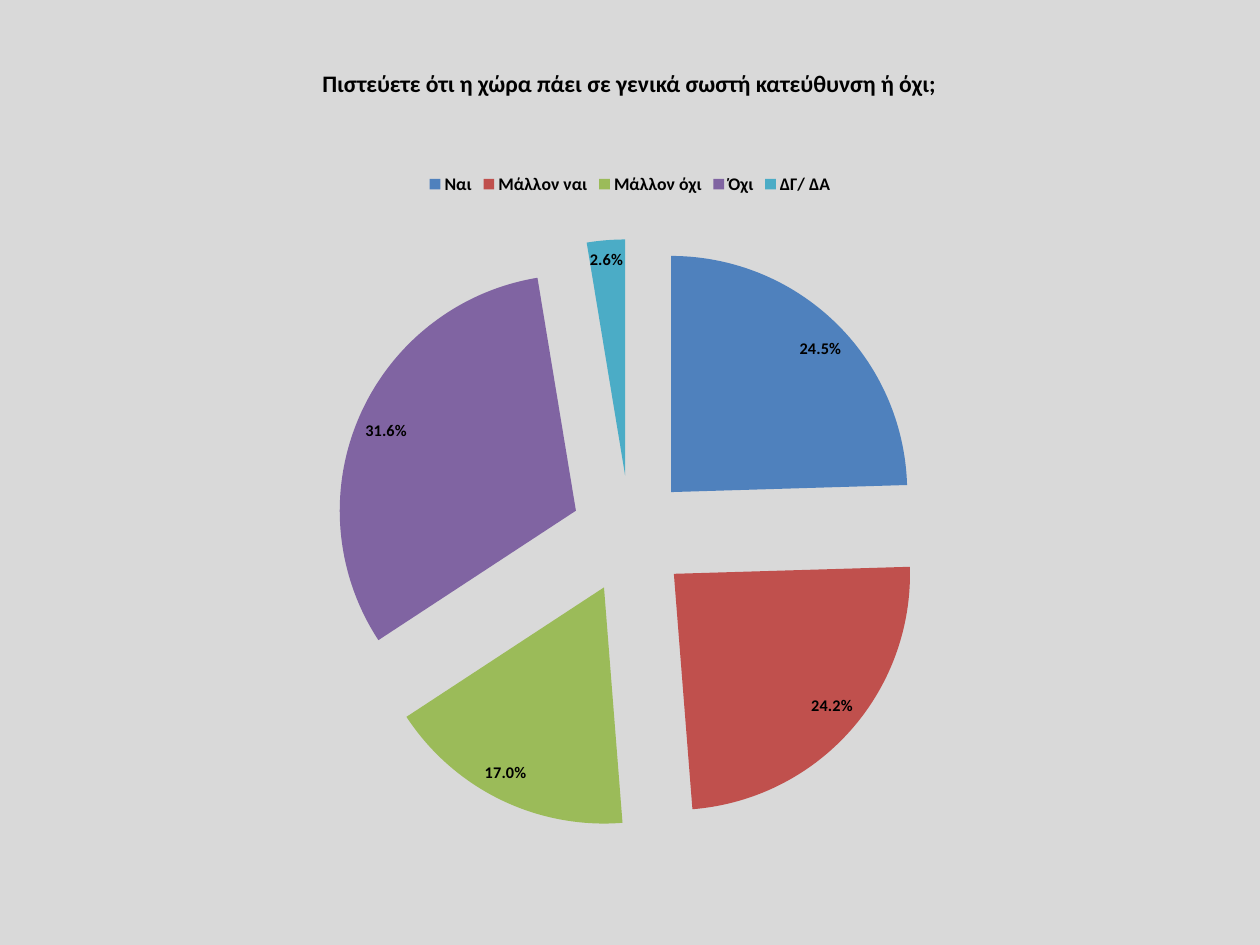
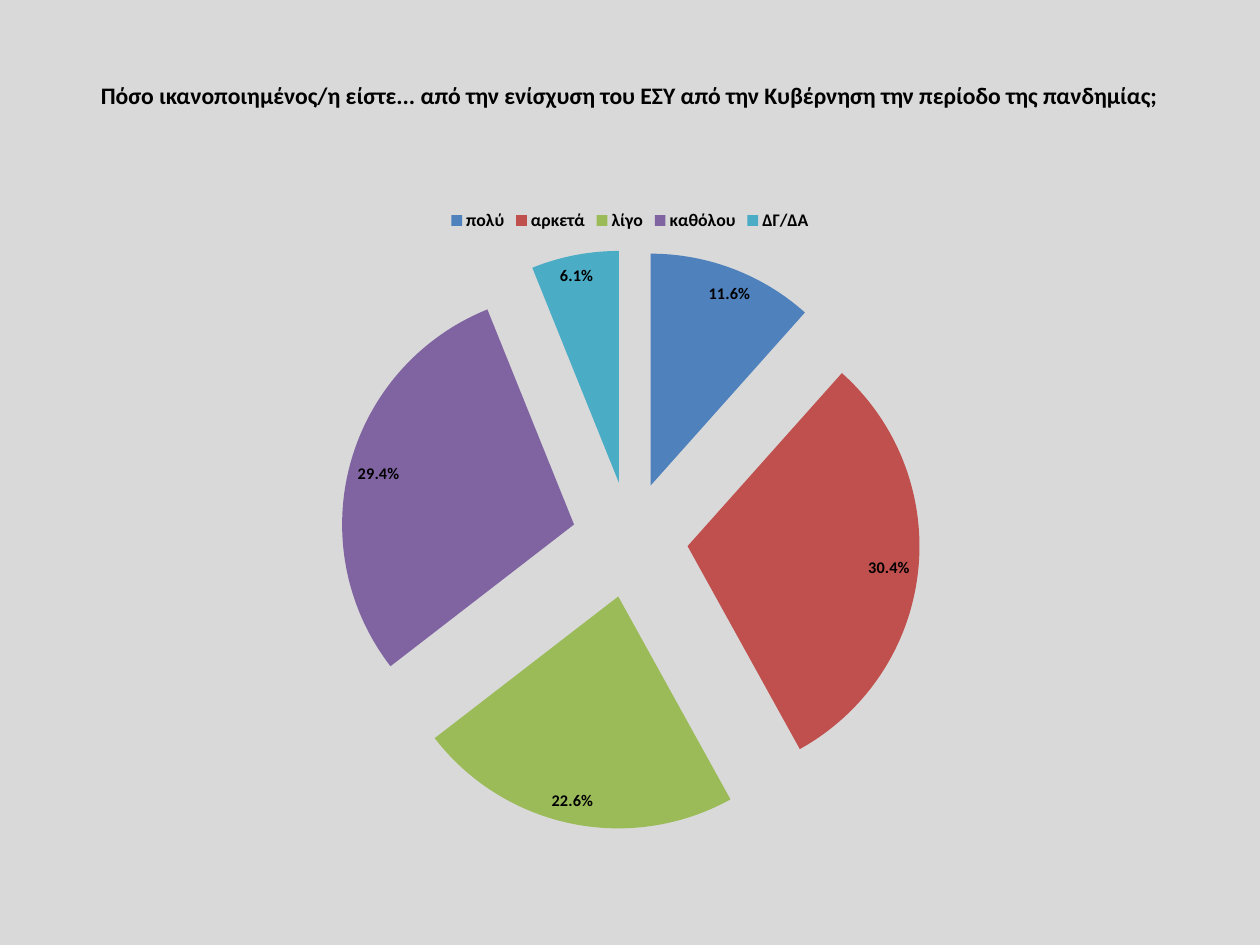
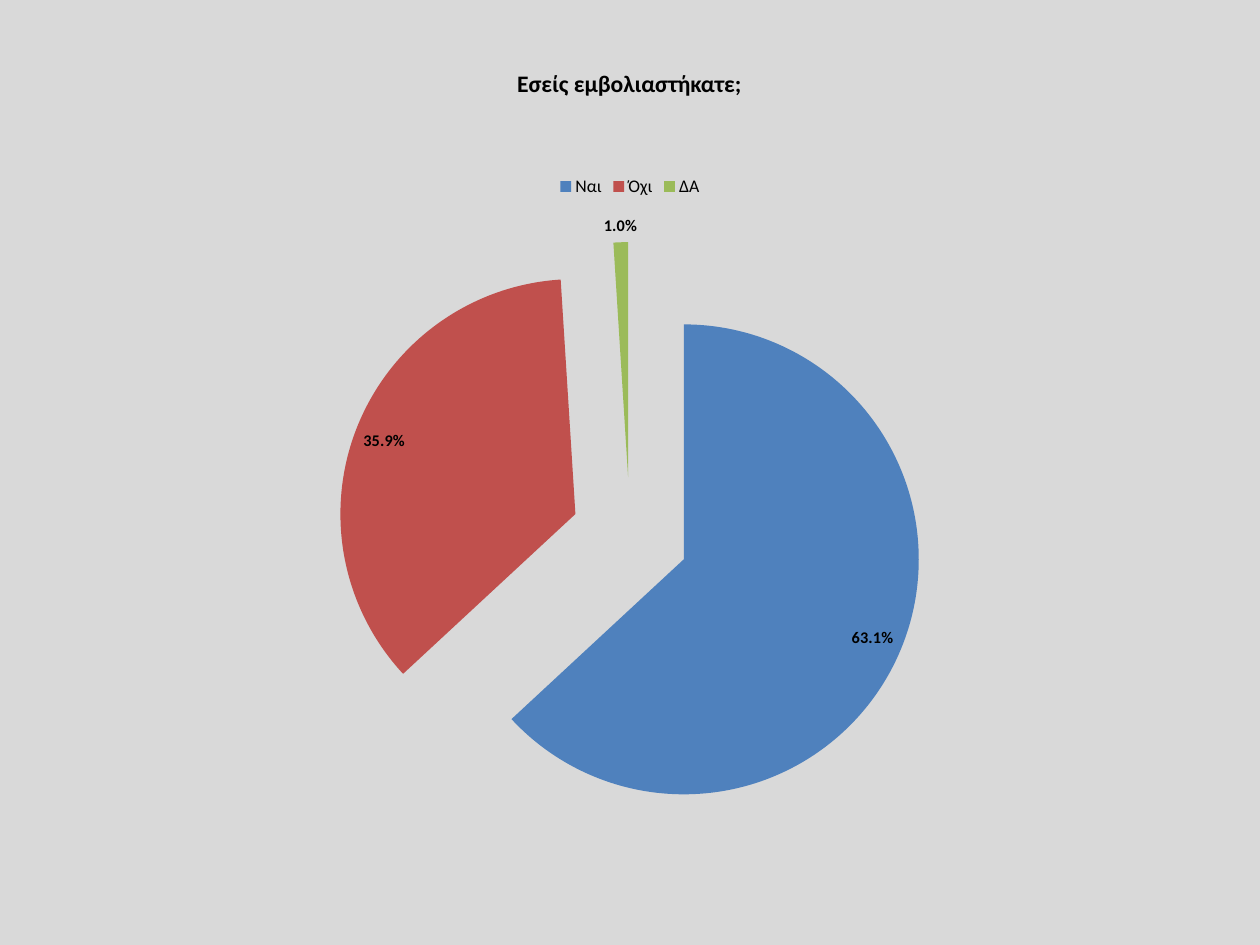
from pptx import Presentation
from pptx.chart.data import CategoryChartData
from pptx.dml.color import RGBColor
from pptx.enum.chart import XL_CHART_TYPE, XL_LABEL_POSITION, XL_LEGEND_POSITION
from pptx.enum.text import MSO_ANCHOR, PP_ALIGN
from pptx.oxml.ns import qn
from pptx.util import Pt

FONT = "Calibri"
COLORS = {
    "background": "D9D9D9",
    "text": "000000",
    "blue": "4F81BD",
    "red": "C0504D",
    "green": "9BBB59",
    "purple": "8064A2",
    "teal": "4BACC6",
}
SLICES = ["blue", "red", "green", "purple", "teal"]
EXPLOSION = 25

# Poll questions: answers in percent, and the positions that differ
POLLS = [
    {
        "title": "Πιστεύετε ότι η χώρα πάει σε γενικά σωστή κατεύθυνση ή όχι;",
        "answers": {"Ναι": 24.5, "Μάλλον ναι": 24.2, "Μάλλον όχι": 17,
                    "Όχι": 31.6, "ΔΓ/ ΔΑ": 2.6},
        "title_height": 44.6, "chart_top": 109.4, "legend_bold": True,
    },
    {
        "title": "Πόσο ικανοποιημένος/η είστε... από την ενίσχυση του ΕΣΥ "
                 "από την Κυβέρνηση την περίοδο της πανδημίας;",
        "answers": {"πολύ": 11.6, "αρκετά": 30.4, "λίγο": 22.6,
                    "καθόλου": 29.4, "ΔΓ/ΔΑ": 6.1},
        "title_height": 60.5, "chart_top": 134, "legend_bold": True,
    },
    {
        "title": "Εσείς εμβολιαστήκατε;",
        "answers": {"Ναι": 63.1, "Όχι": 35.9, "ΔΑ": 1},
        "title_height": 44.6, "chart_top": 111, "legend_bold": False,
    },
]
CHART_BOTTOM = 571.3


def rgb(name):
    return RGBColor.from_string(COLORS[name])


def set_font(font, size, bold):
    font.name = FONT
    font.size = Pt(size)
    font.bold = bold
    font.color.rgb = rgb("text")


prs = Presentation()
prs.slide_width = Pt(852.5)
prs.slide_height = Pt(639.4)

# Shared background
fill = prs.slide_master.background.fill
fill.solid()
fill.fore_color.rgb = rgb("background")

for poll in POLLS:
    s = prs.slides.add_slide(prs.slide_layouts[6])

    # Question
    title = s.shapes.add_textbox(Pt(58.3), Pt(33.8), Pt(735), Pt(poll["title_height"]))
    tf = title.text_frame
    tf.word_wrap = True
    tf.vertical_anchor = MSO_ANCHOR.MIDDLE
    tf.margin_left = tf.margin_right = Pt(8.6)
    tf.margin_top = tf.margin_bottom = Pt(4.3)
    p = tf.paragraphs[0]
    p.text = poll["title"]
    p.alignment = PP_ALIGN.CENTER
    set_font(p.font, 16, True)

    # Exploded pie
    data = CategoryChartData()
    data.categories = list(poll["answers"])
    data.add_series("Series 1", list(poll["answers"].values()))
    top = poll["chart_top"]
    chart = s.shapes.add_chart(XL_CHART_TYPE.PIE_EXPLODED, Pt(42.5), Pt(top),
                               Pt(767.5), Pt(CHART_BOTTOM - top), data).chart
    chart.has_title = False
    set_font(chart.font, 10, False)
    plot = chart.plots[0]
    plot.vary_by_categories = True
    series = plot.series[0]
    for explosion in series._element.iter(qn("c:explosion")):
        explosion.set("val", str(EXPLOSION))
    for i, color in enumerate(SLICES[:len(poll["answers"])]):
        fill = series.points[i].format.fill
        fill.solid()
        fill.fore_color.rgb = rgb(color)

    # Legend
    chart.has_legend = True
    chart.legend.position = XL_LEGEND_POSITION.TOP
    chart.legend.include_in_layout = False
    set_font(chart.legend.font, 12, poll["legend_bold"])

    # Percentages
    labels = series.data_labels
    labels.show_percentage = True
    labels.show_value = False
    labels.number_format = "0.0%"
    labels.number_format_is_linked = False
    labels.position = XL_LABEL_POSITION.BEST_FIT
    set_font(labels.font, 11, True)

prs.save("out.pptx")
